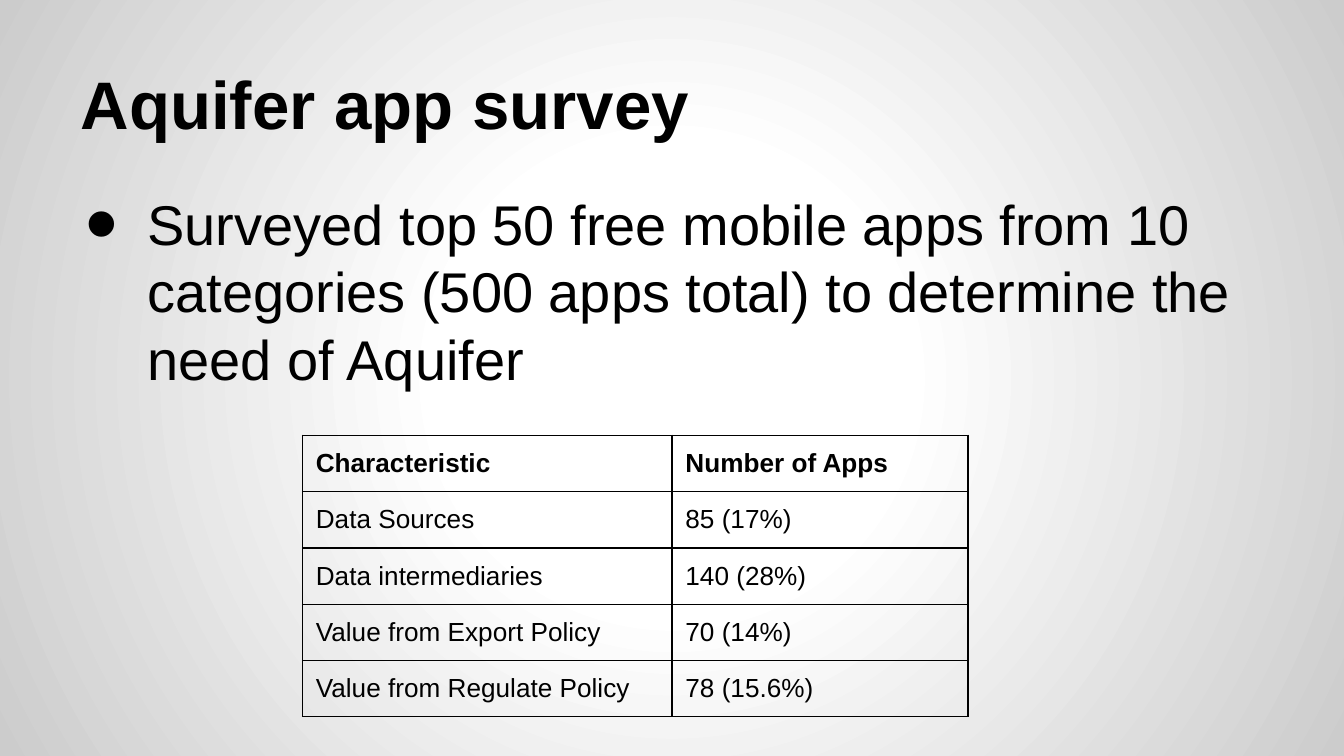
from dataclasses import dataclass

from lxml import etree
from pptx import Presentation
from pptx.dml.color import RGBColor
from pptx.enum.text import MSO_ANCHOR, MSO_AUTO_SIZE, PP_ALIGN
from pptx.oxml import parse_xml
from pptx.oxml.ns import nsdecls, qn
from pptx.util import Pt

TOP, BOTTOM = MSO_ANCHOR.TOP, MSO_ANCHOR.BOTTOM
LEFT = PP_ALIGN.LEFT
NO_FIT = MSO_AUTO_SIZE.NONE
TITLE_ONLY = 5


@dataclass(frozen=True)
class Theme:
    font: str = "Arial"
    ink: str = "000000"
    glow: str = "FFFFFF"
    edge: str = "CCCCCC"
    title: int = 36
    body: int = 30
    cell: int = 14
    inset: float = 7.2
    rule: float = 0.75


class SlideBuilder:
    def __init__(self, prs, theme):
        self.theme = theme
        self.s = prs.slides.add_slide(prs.slide_layouts[TITLE_ONLY])

    def background(self):
        t = self.theme
        fill = self.s.background.fill
        fill.solid()
        stops = "".join(
            f'<a:gs pos="{pos * 1000}"><a:srgbClr val="{color}"/></a:gs>'
            for pos, color in ((0, t.glow), (30, t.glow), (100, t.edge))
        )
        grad = parse_xml(
            f'<a:gradFill {nsdecls("a")}><a:gsLst>{stops}</a:gsLst><a:path path="circle">'
            '<a:fillToRect l="50000" t="50000" r="50000" b="50000"/></a:path></a:gradFill>'
        )
        bg_pr = self.s.element.cSld.find(qn("p:bg")).find(qn("p:bgPr"))
        bg_pr.replace(bg_pr.find(qn("a:solidFill")), grad)

    def text(self, tf, text, size, bold=False):
        p = tf.paragraphs[0]
        p.text = text
        p.alignment = LEFT
        p.font.name = self.theme.font
        p.font.size = Pt(size)
        p.font.bold = bold
        p.font.color.rgb = RGBColor.from_string(self.theme.ink)
        return p

    def frame(self, sp, anchor):
        tf = sp.text_frame
        tf.word_wrap = True
        tf.auto_size = NO_FIT
        tf.vertical_anchor = anchor
        inset = Pt(self.theme.inset)
        tf.margin_left = tf.margin_right = tf.margin_top = tf.margin_bottom = inset
        return tf

    def title(self, text, x, y, w, h):
        sp = self.s.shapes.title
        sp.left, sp.top, sp.width, sp.height = Pt(x), Pt(y), Pt(w), Pt(h)
        self.text(self.frame(sp, BOTTOM), text, self.theme.title, bold=True)

    def bullet(self, text, x, y, w, h):
        sp = self.s.shapes.add_textbox(Pt(x), Pt(y), Pt(w), Pt(h))
        p = self.text(self.frame(sp, TOP), text, self.theme.body)
        p.space_before = Pt(6)
        p_pr = p._p.get_or_add_pPr()
        p_pr.set("marL", str(Pt(36)))
        p_pr.set("indent", str(Pt(-33)))
        marks = parse_xml(
            f'<a:pPr {nsdecls("a")}><a:buClr><a:srgbClr val="{self.theme.ink}"/></a:buClr>'
            f'<a:buSzPct val="167000"/><a:buFont typeface="{self.theme.font}"/>'
            '<a:buChar char="•"/></a:pPr>'
        )
        spacing = p_pr.find(qn("a:spcBef"))
        for mark in reversed(list(marks)):
            spacing.addnext(mark)

    def borders(self, cell):
        tc_pr = cell._tc.get_or_add_tcPr()
        for i, side in enumerate(("lnL", "lnR", "lnT", "lnB")):
            ln = etree.Element(qn(f"a:{side}"), w=str(Pt(self.theme.rule)))
            fill = etree.SubElement(ln, qn("a:solidFill"))
            etree.SubElement(fill, qn("a:srgbClr"), val=self.theme.ink)
            tc_pr.insert(i, ln)

    def table(self, rows, x, y, widths, row_h):
        frame = self.s.shapes.add_table(
            len(rows), len(widths), Pt(x), Pt(y), Pt(sum(widths)), Pt(row_h * len(rows))
        )
        tbl = frame.table
        tbl.horz_banding = False
        for col, width in zip(tbl.columns, widths):
            col.width = Pt(width)
        inset = Pt(self.theme.inset)
        for i, row in enumerate(rows):
            tbl.rows[i].height = Pt(row_h)
            for j, text in enumerate(row):
                cell = tbl.cell(i, j)
                cell.fill.background()
                cell.margin_left = cell.margin_right = inset
                cell.margin_top = cell.margin_bottom = inset
                self.text(cell.text_frame, text, self.theme.cell, bold=i == 0)
                self.borders(cell)


def main():
    """Build the app survey slide."""
    prs = Presentation()
    prs.slide_width, prs.slide_height = Pt(720), Pt(405)
    slide = SlideBuilder(prs, Theme())
    slide.background()
    slide.title("Aquifer app survey", 36, 16.2, 648, 67.5)
    slide.bullet(
        "Surveyed top 50 free mobile apps from 10 categories "
        "(500 apps total) to determine the need of Aquifer",
        36, 94.5, 648, 293,
    )
    rows = [
        ("Characteristic", "Number of Apps"),
        ("Data Sources", "85 (17%)"),
        ("Data intermediaries", "140 (28%)"),
        ("Value from Export Policy", "70 (14%)"),
        ("Value from Regulate Policy", "78 (15.6%)"),
    ]
    slide.table(rows, 162, 233.2, (198, 158.6), 30.1)
    prs.save("out.pptx")


if __name__ == "__main__":
    main()
